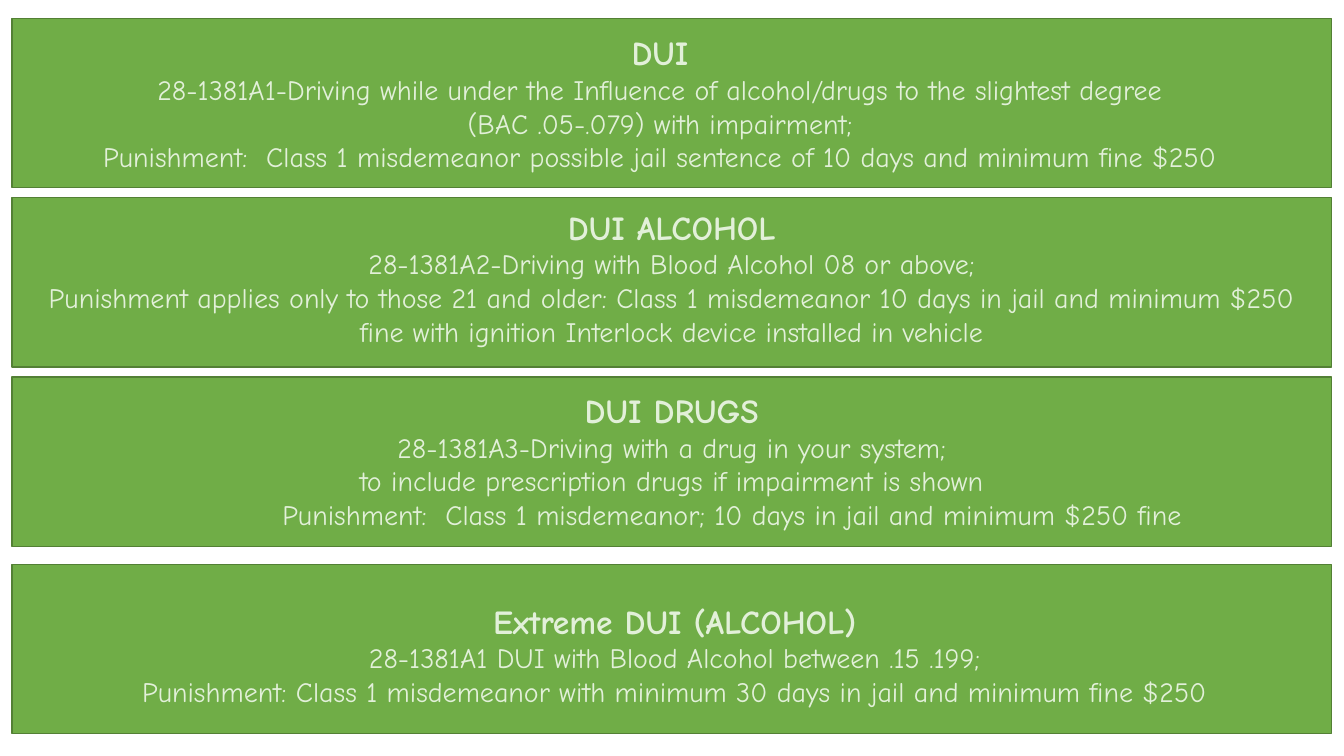
from dataclasses import dataclass

from pptx import Presentation
from pptx.dml.color import RGBColor
from pptx.enum.shapes import MSO_SHAPE
from pptx.enum.text import MSO_AUTO_SIZE, PP_ALIGN
from pptx.slide import Slide
from pptx.util import Cm, Pt

FONT = "Comic Neue"
GREEN, DARK_GREEN, PALE_GREEN = "70AD47", "538035", "E2F0D9"
PANEL_LEFT, PANEL_WIDTH, PANEL_HEIGHT = 0.3, 33.25, 4.27


@dataclass(frozen=True)
class Line:
    text: str
    indent: float = 0


@dataclass(frozen=True)
class Offence:
    """One offence panel; all lengths are in centimetres."""
    panel_top: float
    text_left: float
    text_top: float
    text_width: float
    text_height: float
    heading: str
    lines: tuple[Line, ...]


OFFENCES = (
    Offence(0.46, 0.61, 0.69, 32.05, 4.62, "DUI", (
        Line("28-1381A1-Driving while under the Influence of alcohol/drugs to the slightest degree"),
        Line("(BAC .05-.079) with impairment;"),
        Line("Punishment:  Class 1 misdemeanor possible jail sentence of 10 days and minimum fine $250"),
    )),
    Offence(4.98, 0.46, 5.08, 32.94, 4.62, "DUI ALCOHOL", (
        Line("28-1381A2-Driving with Blood Alcohol 08 or above;"),
        Line("Punishment applies only to those 21 and older: Class 1 misdemeanor 10 days in jail "
             "and minimum $250 fine with ignition Interlock device installed in vehicle"),
    )),
    Offence(9.5, 0.46, 9.7, 32.94, 4.7, "DUI DRUGS", (
        Line("28-1381A3-Driving with a drug in your system;"),
        Line("to include prescription drugs if impairment is shown"),
        Line("Punishment:  Class 1 misdemeanor; 10 days in jail and minimum $250 fine", indent=3.05),
    )),
    Offence(14.22, 0.61, 15.01, 32.79, 3.84, "Extreme DUI (ALCOHOL)", (
        Line("28-1381A1 DUI with Blood Alcohol between .15 .199;"),
        Line("Punishment: Class 1 misdemeanor with minimum 30 days in jail and minimum fine $250"),
    )),
)


def color(hex_code: str) -> RGBColor:
    return RGBColor.from_string(hex_code)


def add_panel(slide: Slide, offence: Offence) -> None:
    shape = slide.shapes.add_shape(
        MSO_SHAPE.RECTANGLE, Cm(PANEL_LEFT), Cm(offence.panel_top),
        Cm(PANEL_WIDTH), Cm(PANEL_HEIGHT))
    shape.shadow.inherit = False
    shape.fill.solid()
    shape.fill.fore_color.rgb = color(GREEN)
    shape.line.color.rgb = color(DARK_GREEN)
    shape.line.width = Pt(1)


def add_text(slide: Slide, offence: Offence) -> None:
    text_box = slide.shapes.add_textbox(
        Cm(offence.text_left), Cm(offence.text_top),
        Cm(offence.text_width), Cm(offence.text_height))
    frame = text_box.text_frame
    frame.word_wrap = True
    frame.auto_size = MSO_AUTO_SIZE.SHAPE_TO_FIT_TEXT
    for index, line in enumerate((Line(offence.heading), *offence.lines)):
        is_heading = index == 0
        paragraph = frame.paragraphs[0] if is_heading else frame.add_paragraph()
        paragraph.text = line.text
        paragraph.alignment = PP_ALIGN.CENTER
        paragraph.font.name = FONT
        paragraph.font.size = Pt(24 if is_heading else 20)
        paragraph.font.bold = is_heading
        paragraph.font.color.rgb = color(PALE_GREEN)
        if line.indent:
            paragraph._p.get_or_add_pPr().set("marL", str(Cm(line.indent)))


def main() -> None:
    presentation = Presentation()
    presentation.slide_width, presentation.slide_height = Cm(33.87), Cm(19.05)
    slide = presentation.slides.add_slide(presentation.slide_layouts[6])

    # Green panels behind, text in front
    for offence in OFFENCES:
        add_panel(slide, offence)
    for offence in OFFENCES:
        add_text(slide, offence)

    presentation.save("out.pptx")


if __name__ == "__main__":
    main()
